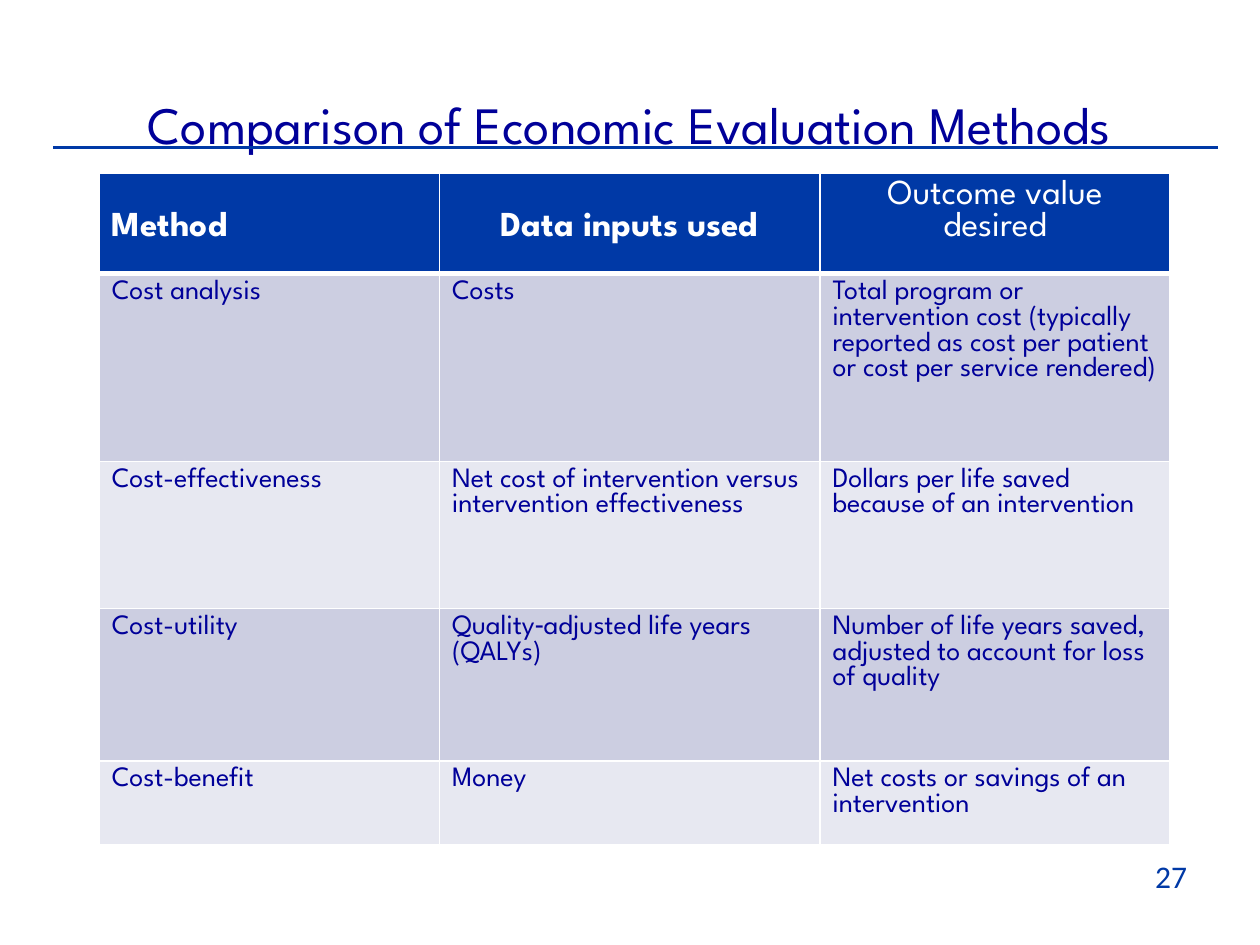
from lxml import etree
from pptx import Presentation
from pptx.dml.color import RGBColor
from pptx.enum import shapes, text
from pptx.oxml import ns
from pptx.util import Cm, Pt

COLORS = {"navy": "000099", "blue": "0039A6", "white": "FFFFFF",
          "band_dark": "CCCEE1", "band_light": "E7E8F1"}
FONT = "League Spartan"
COLUMN_WIDTHS = (6.86, 7.67, 7.06)
ROW_HEIGHTS = (2.03, 3.78, 2.97, 3.07, 1.68)
LEFT, CENTER, RIGHT = (text.PP_ALIGN.LEFT, text.PP_ALIGN.CENTER,
                       text.PP_ALIGN.RIGHT)
HEADERS = (
    ("Method", {"bold": True, "align": LEFT, "top": 0.78}),
    ("Data inputs used", {"bold": True, "align": CENTER, "top": 0.78}),
    ("Outcome value desired", {"bold": False, "align": CENTER, "top": 0.13}),
)
METHODS = (
    ("Cost analysis", "Costs",
     "Total program or intervention cost (typically reported as cost per "
     "patient or cost per service rendered)"),
    ("Cost-effectiveness",
     "Net cost of intervention versus intervention effectiveness",
     "Dollars per life saved because of an intervention"),
    ("Cost-utility", "Quality‐adjusted life years (QALYs)",
     "Number of life years saved, adjusted to account for loss of quality"),
    ("Cost-benefit", "Money", "Net costs or savings of an intervention"),
)


def rgb(color):
    """Return the named colour."""
    return RGBColor.from_string(COLORS[color])


def write(frame, wording, color, align=LEFT, **font_values):
    """Fill a text frame with one formatted paragraph."""
    frame.word_wrap = True
    paragraph = frame.paragraphs[0]
    paragraph.alignment = align
    run = paragraph.add_run()
    run.text = wording
    run.font.color.rgb = rgb(color)
    for name, value in ({"name": FONT, "bold": False} | font_values).items():
        setattr(run.font, name, value)


def place(shape, left, top, width, height):
    """Set position and size in centimetres."""
    box = {"left": left, "top": top, "width": width, "height": height}
    for name, value in box.items():
        setattr(shape, name, Cm(value))


def add_borders(cell, top, bottom):
    """Draw white borders of the given point widths at top and bottom."""
    properties = cell._tc.get_or_add_tcPr()
    sides = {"lnL": 1, "lnR": 1, "lnT": top, "lnB": bottom}
    for position, (side, width) in enumerate(sides.items()):
        border = etree.Element(ns.qn(f"a:{side}"), w=str(Pt(width)))
        fill = etree.SubElement(border, ns.qn("a:solidFill"))
        etree.SubElement(fill, ns.qn("a:srgbClr"), val=COLORS["white"])
        properties.insert(position, border)


def format_cell(cell, wording, fill, color, size, top=0.13, borders=(1, 1),
                **values):
    """Fill, border and write one table cell."""
    cell.fill.solid()
    cell.fill.fore_color.rgb = rgb(fill)
    cell.margin_top = Cm(top)
    add_borders(cell, *borders)
    write(cell.text_frame, wording, color, size=Pt(size), **values)


def add_comparison(slide):
    """Add the table of evaluation methods."""
    table = slide.shapes.add_table(
        len(ROW_HEIGHTS), len(COLUMN_WIDTHS), Cm(2), Cm(3.49),
        Cm(sum(COLUMN_WIDTHS)), Cm(sum(ROW_HEIGHTS))).table
    for column, width in zip(table.columns, COLUMN_WIDTHS):
        column.width = Cm(width)
    for row, height in zip(table.rows, ROW_HEIGHTS):
        row.height = Cm(height)
    for column, (heading, values) in enumerate(HEADERS):
        format_cell(table.cell(0, column), heading, "blue", "white", 20,
                    borders=(1, 3), **values)
    for row, method in enumerate(METHODS, start=1):
        band = "band_dark" if row % 2 else "band_light"
        for column, wording in enumerate(method):
            format_cell(table.cell(row, column), wording, band, "navy", 16,
                        borders=(3 if row == 1 else 1, 1))


def add_title(slide):
    """Place and format the title."""
    title = slide.shapes.title
    place(title, 0.71, 1.7, 23.98, 1.55)
    title.text_frame.vertical_anchor = text.MSO_ANCHOR.BOTTOM
    title.text_frame.auto_size = text.MSO_AUTO_SIZE.NONE
    write(title.text_frame, "Comparison of Economic Evaluation Methods",
          "navy", CENTER, size=Pt(30))


def add_page_number(slide):
    """Add the page number at the lower right."""
    number = slide.shapes.add_textbox(Cm(18.26), Cm(17.15), Cm(5.92), Cm(1.32))
    write(number.text_frame, "27", "blue", RIGHT, name="Calibri", size=Pt(18))


def add_rule(slide):
    """Draw the line under the title."""
    rule = slide.shapes.add_connector(
        shapes.MSO_CONNECTOR.STRAIGHT, Cm(1.07), Cm(2.97), Cm(24.56), Cm(2.97))
    rule.line.color.rgb = rgb("blue")
    rule.line.width = Pt(1.75)
    etree.SubElement(rule._element.spPr, ns.qn("a:effectLst"))


def main():
    """Build and save the slide."""
    presentation = Presentation()
    presentation.slide_width = Cm(25.4)
    presentation.slide_height = Cm(19.05)
    slide = presentation.slides.add_slide(presentation.slide_layouts[5])
    add_comparison(slide)
    add_title(slide)
    add_page_number(slide)
    add_rule(slide)
    presentation.save("out.pptx")


if __name__ == "__main__":
    main()
